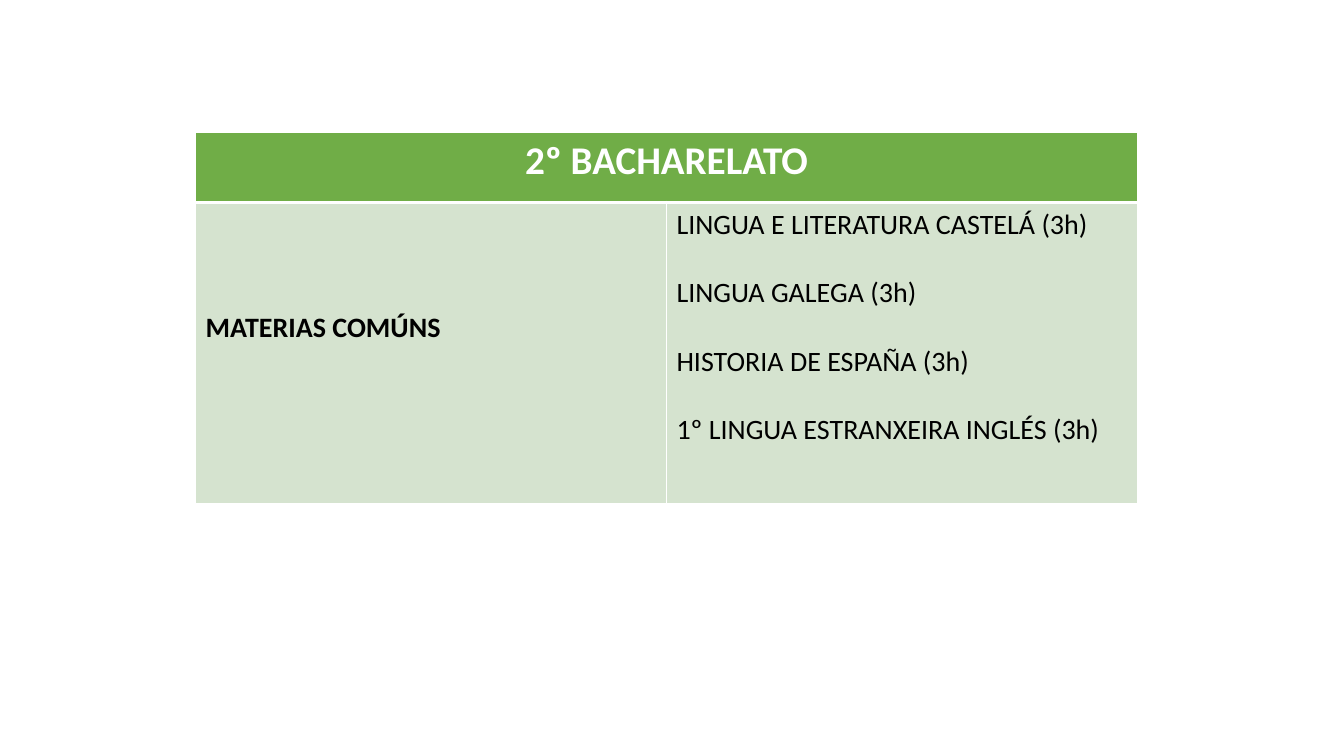
from lxml.etree import SubElement
from pptx import Presentation
from pptx.dml.color import RGBColor
from pptx.enum.text import PP_ALIGN
from pptx.oxml.ns import qn
from pptx.util import Pt

PX = 9144
WHITE = RGBColor(0xFF, 0xFF, 0xFF)
BLACK = RGBColor(0x00, 0x00, 0x00)
GREEN = RGBColor(0x70, 0xAD, 0x47)
PALE_GREEN = RGBColor(0xD5, 0xE3, 0xCF)
SUBJECTS = [
    "LINGUA E LITERATURA CASTELÁ (3h)",
    "LINGUA GALEGA (3h)",
    "HISTORIA DE ESPAÑA (3h)",
    "1º LINGUA ESTRANXEIRA INGLÉS (3h)",
]


class SlideBuilder:
    """Draws styled tables on one slide, with lengths in px."""

    def __init__(self, slide, font="Calibri"):
        self.slide = slide
        self.font = font

    def table(self, left, top, widths, heights):
        frame = self.slide.shapes.add_table(
            len(heights), len(widths), left * PX, top * PX,
            sum(widths) * PX, sum(heights) * PX)
        grid = frame.table
        for column, width in zip(grid.columns, widths):
            column.width = width * PX
        for row, height in zip(grid.rows, heights):
            row.height = height * PX
        return grid

    def borders(self, cell, top=1, bottom=1):
        properties = cell._tc.get_or_add_tcPr()
        for side, points in zip("LRTB", (1, 1, top, bottom)):
            line = SubElement(properties, qn(f"a:ln{side}"), w=str(Pt(points)))
            fill = SubElement(line, qn("a:solidFill"))
            SubElement(fill, qn("a:srgbClr"), val=str(WHITE))

    def text(self, cell, lines, size, color, bold=False, align=PP_ALIGN.LEFT, gap=0):
        cell.text_frame.text = "\n".join(lines)
        for index, paragraph in enumerate(cell.text_frame.paragraphs):
            paragraph.alignment = align
            if index:
                paragraph.space_before = Pt(gap)
            for run in paragraph.runs:
                run.font.name = self.font
                run.font.size = Pt(size)
                run.font.bold = bold
                run.font.color.rgb = color

    def fill(self, cell, color):
        cell.fill.solid()
        cell.fill.fore_color.rgb = color


def main():
    deck = Presentation()
    deck.slide_width, deck.slide_height = 1333 * PX, 750 * PX
    builder = SlideBuilder(deck.slides.add_slide(deck.slide_layouts[6]))

    curriculum = builder.table(194, 131, [467, 467], [70, 299])
    course, course_end = curriculum.rows[0].cells
    category, subjects = curriculum.rows[1].cells
    course.merge(course_end)

    for heading in (course, course_end):
        builder.borders(heading, bottom=3)
        builder.fill(heading, GREEN)
    for body in (category, subjects):
        builder.borders(body, top=3)
        builder.fill(body, PALE_GREEN)

    builder.text(course, ["2º BACHARELATO"], 28, WHITE, bold=True, align=PP_ALIGN.CENTER)
    builder.text(category, ["MATERIAS COMÚNS"], 20, BLACK, bold=True)
    category.margin_top = 107 * PX
    builder.text(subjects, SUBJECTS, 20, BLACK, gap=24.4)

    deck.save("out.pptx")


if __name__ == "__main__":
    main()
